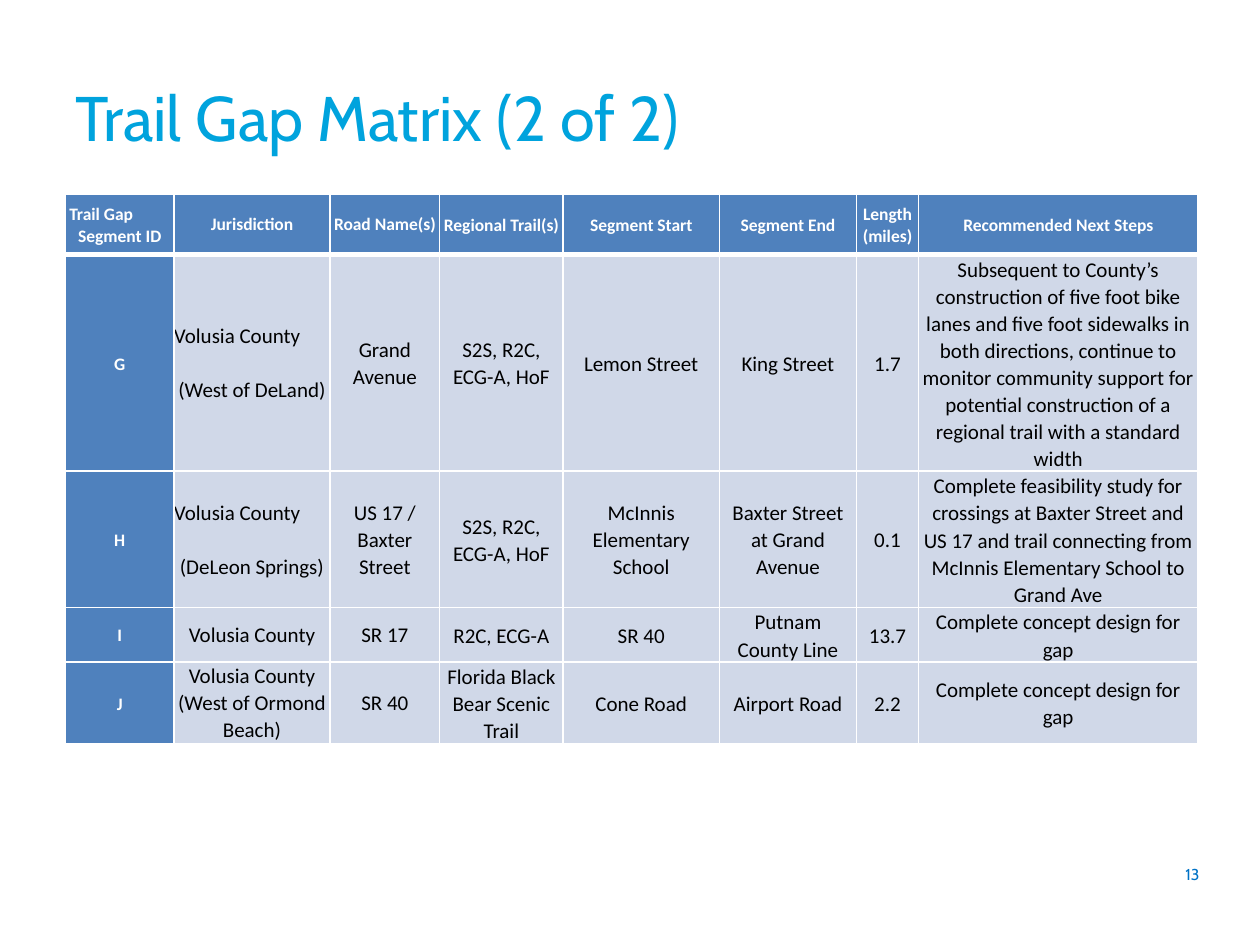
import pptx
import pptx.util
import pptx.dml.color
import pptx.enum.text
import pptx.oxml
import pptx.oxml.ns

Inches, Pt = pptx.util.Inches, pptx.util.Pt
Align = pptx.enum.text.PP_ALIGN
Anchor = pptx.enum.text.MSO_ANCHOR

THEME = {
    "head": "Cabin", "body": "Calibri",
    "title": "00A3DD", "page": "0072C6", "label": "4F81BD",
    "cell": "D0D8E8", "light": "FFFFFF", "dark": "000000",
    "title_size": 36, "page_size": 9, "label_size": 10, "cell_size": 12,
    "leading": 1.06, "gap": 15.5,
}

TITLE = "Trail Gap Matrix (2 of 2)"
PAGE = "13"
ROWS = [
    ["Trail Gap\nSegment ID", "Jurisdiction", "Road Name(s)", "Regional Trail(s)",
     "Segment Start", "Segment End", "Length (miles)", "Recommended Next Steps"],
    ["G", "Volusia County\n(West of DeLand)", "Grand Avenue", "S2S, R2C, ECG-A, HoF",
     "Lemon Street", "King Street", "1.7",
     "Subsequent to County’s construction of five foot bike lanes and five foot "
     "sidewalks in both directions, continue to monitor community support for "
     "potential construction of a regional trail with a standard width"],
    ["H", "Volusia County\n(DeLeon Springs)", "US 17 / Baxter Street",
     "S2S, R2C, ECG-A, HoF", "McInnis Elementary School",
     "Baxter Street at Grand Avenue", "0.1",
     "Complete feasibility study for crossings at Baxter Street and US 17 and trail "
     "connecting from McInnis Elementary School to Grand Ave"],
    ["I", "Volusia County", "SR 17", "R2C, ECG-A", "SR 40", "Putnam County Line",
     "13.7", "Complete concept design for gap"],
    ["J", "Volusia County\n(West of Ormond Beach)", "SR 40",
     "Florida Black Bear Scenic Trail", "Cone Road", "Airport Road", "2.2",
     "Complete concept design for gap"],
]
WIDTHS = [0.86, 1.24, 0.87, 0.98, 1.24, 1.09, 0.49, 2.22]
HEIGHTS = [0.48, 1.72, 1.08, 0.43, 0.65]
LEFT_LEAD = {(0, 0), (1, 1), (2, 1)}  # cells whose first line sits left
SPACED = {(1, 1), (2, 1)}  # cells with a gap after the first line
FLUSH = (1, 2)  # columns without insets


def paint(font, name, size, color, bold=False):
    font.name, font.size, font.bold = name, Pt(size), bold
    font.color.rgb = pptx.dml.color.RGBColor.from_string(color)


def add_text(slide, box, text, size, color, align, anchor, inset):
    frame = slide.shapes.add_textbox(*map(Inches, box)).text_frame
    frame.word_wrap = True
    frame.vertical_anchor = anchor
    frame.margin_left = frame.margin_right = Inches(inset)
    frame.margin_top = frame.margin_bottom = Inches(inset / 2)
    frame.text = text
    line = frame.paragraphs[0]
    line.alignment = align
    paint(line.runs[0].font, THEME["head"], size, color)


def add_edges(cell, row):
    """Draw white cell borders, heavy under the header row."""
    wide = {"T": 3 if row == 1 else 1, "B": 3 if row == 0 else 1}
    props = cell._tc.get_or_add_tcPr()
    for side in "LRTB":
        props.append(pptx.oxml.parse_xml(
            f'<a:ln{side} {pptx.oxml.ns.nsdecls("a")} w="{Pt(wide.get(side, 1))}">'
            f'<a:solidFill><a:srgbClr val="{THEME["light"]}"/></a:solidFill>'
            f'</a:ln{side}>'))


def fill_cell(cell, row, col, text):
    label = row == 0 or col == 0
    side, top = (0, 0) if col in FLUSH else (0.03, 0.01)
    cell.margin_left = cell.margin_right = Inches(side)
    cell.margin_top, cell.margin_bottom = Inches(top), 0
    cell.vertical_anchor = Anchor.MIDDLE
    add_edges(cell, row)
    cell.fill.solid()
    cell.fill.fore_color.rgb = pptx.dml.color.RGBColor.from_string(
        THEME["label" if label else "cell"])
    cell.text_frame.text = text
    for line in cell.text_frame.paragraphs:
        line.alignment = Align.CENTER
        line.line_spacing = THEME["leading"]
        paint(line.runs[0].font, THEME["body"],
              THEME["label_size" if label else "cell_size"],
              THEME["light" if label else "dark"], label)
    lead = cell.text_frame.paragraphs[0]
    if (row, col) in LEFT_LEAD:
        lead.alignment = Align.LEFT
    if (row, col) in SPACED:
        lead.space_after = Pt(THEME["gap"])


def add_matrix(slide):
    table = slide.shapes.add_table(
        len(ROWS), len(WIDTHS), Inches(0.52), Inches(1.54),
        Inches(sum(WIDTHS)), Inches(sum(HEIGHTS))).table
    table.horz_banding = False
    table.first_col = True
    for col, width in zip(table.columns, WIDTHS):
        col.width = Inches(width)
    for row, height in zip(table.rows, HEIGHTS):
        row.height = Inches(height)
    for r, texts in enumerate(ROWS):
        for c, text in enumerate(texts):
            fill_cell(table.cell(r, c), r, c, text)


def main():
    deck = pptx.Presentation()
    deck.slide_width, deck.slide_height = Inches(10), Inches(7.5)
    slide = deck.slides.add_slide(deck.slide_layouts[6])
    add_text(slide, (0.5, 0.3, 9, 1.25), TITLE, THEME["title_size"],
             THEME["title"], Align.LEFT, Anchor.MIDDLE, 0.1)
    add_text(slide, (0.9 * 10 - 0.04, 6.51, 0.56, 0.5), PAGE, THEME["page_size"],
             THEME["page"], Align.RIGHT, Anchor.BOTTOM, 0)
    add_matrix(slide)
    deck.save("out.pptx")


if __name__ == "__main__":
    main()
